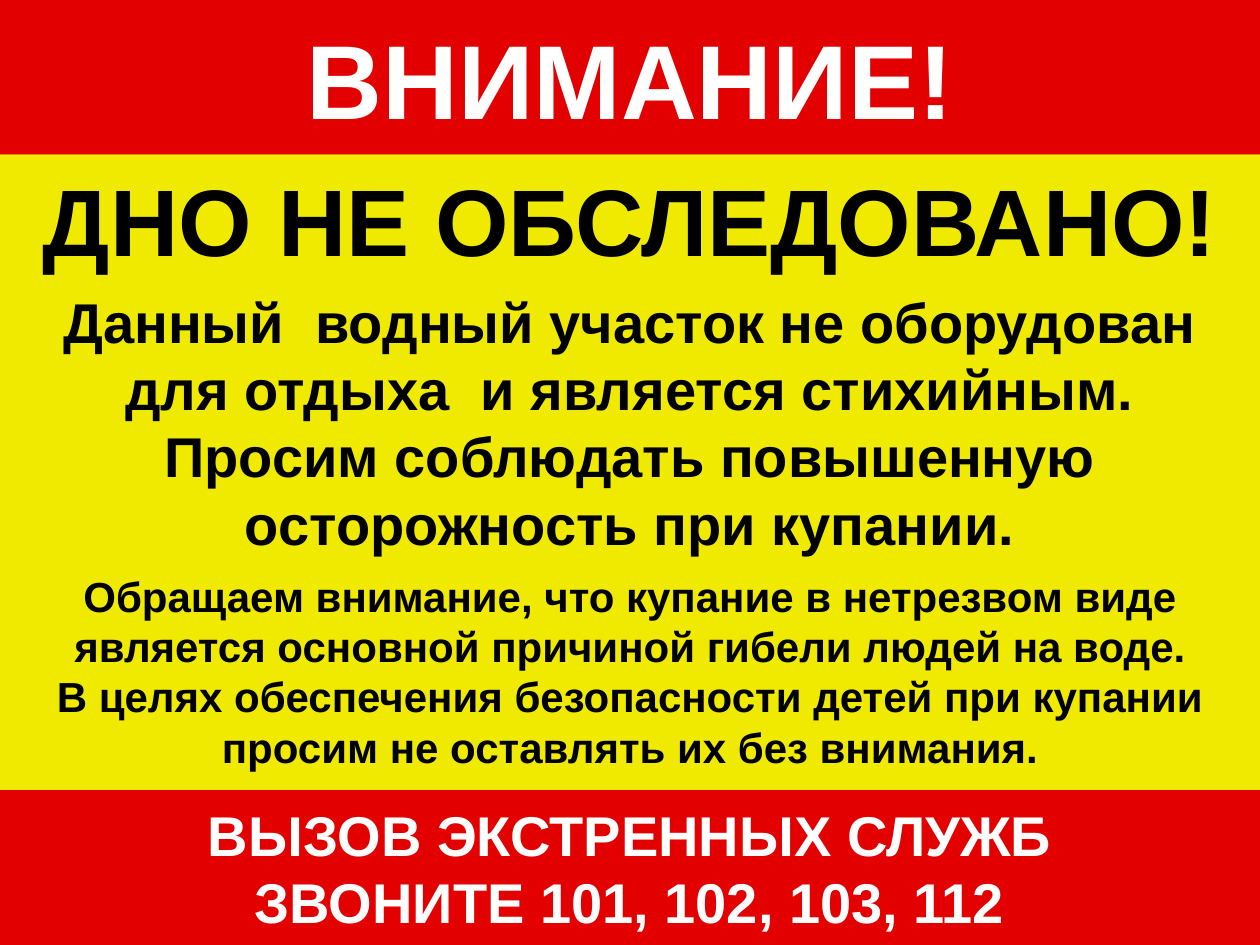
from dataclasses import dataclass

from pptx import Presentation
from pptx.dml.color import RGBColor
from pptx.enum.shapes import MSO_SHAPE
from pptx.enum.text import MSO_ANCHOR, MSO_AUTO_SIZE, PP_ALIGN
from pptx.util import Cm, Pt

WIDTH, HEIGHT = 25.4, 19.05
EDGE = 3.12  # height of the red bands at top and bottom


@dataclass(frozen=True)
class Theme:
    font: str = "Arial"
    red: RGBColor = RGBColor(0xE2, 0x00, 0x00)
    yellow: RGBColor = RGBColor(0xF0, 0xEA, 0x00)
    white: RGBColor = RGBColor(0xFF, 0xFF, 0xFF)
    black: RGBColor = RGBColor(0x00, 0x00, 0x00)
    title: int = 60
    head: int = 54
    body: int = 32
    note: int = 24


class Poster:
    def __init__(self, theme, slide):
        self.theme = theme
        self.slide = slide
        slide.background.fill.solid()
        slide.background.fill.fore_color.rgb = theme.yellow

    def title(self, top, height, text):
        shape = self.slide.shapes.title
        shape.left, shape.top = Cm(0), Cm(top)
        shape.width, shape.height = Cm(WIDTH), Cm(height)
        self.dress(shape, [text], self.theme.title, True)

    def band(self, top, height, lines, size, alert=False):
        shape = self.slide.shapes.add_shape(
            MSO_SHAPE.RECTANGLE, Cm(0), Cm(top), Cm(WIDTH), Cm(height))
        shape.shadow.inherit = False
        self.dress(shape, lines, size, alert)

    def dress(self, shape, lines, size, alert):
        """Fill a full-width band and write one centred paragraph per line."""
        theme = self.theme
        shape.fill.solid()
        shape.fill.fore_color.rgb = theme.red if alert else theme.yellow
        shape.line.fill.background()
        frame = shape.text_frame
        frame.word_wrap = True
        frame.auto_size = MSO_AUTO_SIZE.NONE
        frame.vertical_anchor = MSO_ANCHOR.MIDDLE
        for i, line in enumerate(lines):
            para = frame.add_paragraph() if i else frame.paragraphs[0]
            para.alignment = PP_ALIGN.CENTER
            run = para.add_run()
            run.text = line
            run.font.name = theme.font
            run.font.size = Pt(size)
            run.font.bold = True
            run.font.color.rgb = theme.white if alert else theme.black


def main():
    deck = Presentation()
    deck.slide_width, deck.slide_height = Cm(WIDTH), Cm(HEIGHT)
    theme = Theme()
    poster = Poster(theme, deck.slides.add_slide(deck.slide_layouts[5]))

    poster.title(0, EDGE, "ВНИМАНИЕ!")
    poster.band(EDGE, 2.59, ["ДНО НЕ ОБСЛЕДОВАНО!"], theme.head)
    poster.band(5.71, 5.59, [
        "Данный  водный участок не оборудован для отдыха  и является "
        "стихийным. Просим соблюдать повышенную осторожность при купании.",
    ], theme.body)
    poster.band(HEIGHT - EDGE, EDGE, [
        "ВЫЗОВ ЭКСТРЕННЫХ СЛУЖБ",
        "ЗВОНИТЕ 101, 102, 103, 112",
    ], theme.body, alert=True)
    poster.band(11.53, 3.99, [
        "Обращаем внимание, что купание в нетрезвом виде является "
        "основной причиной гибели людей на воде.",
        "В целях обеспечения безопасности детей при купании",
        "просим не оставлять их без внимания.",
    ], theme.note)

    deck.save("out.pptx")


if __name__ == "__main__":
    main()
